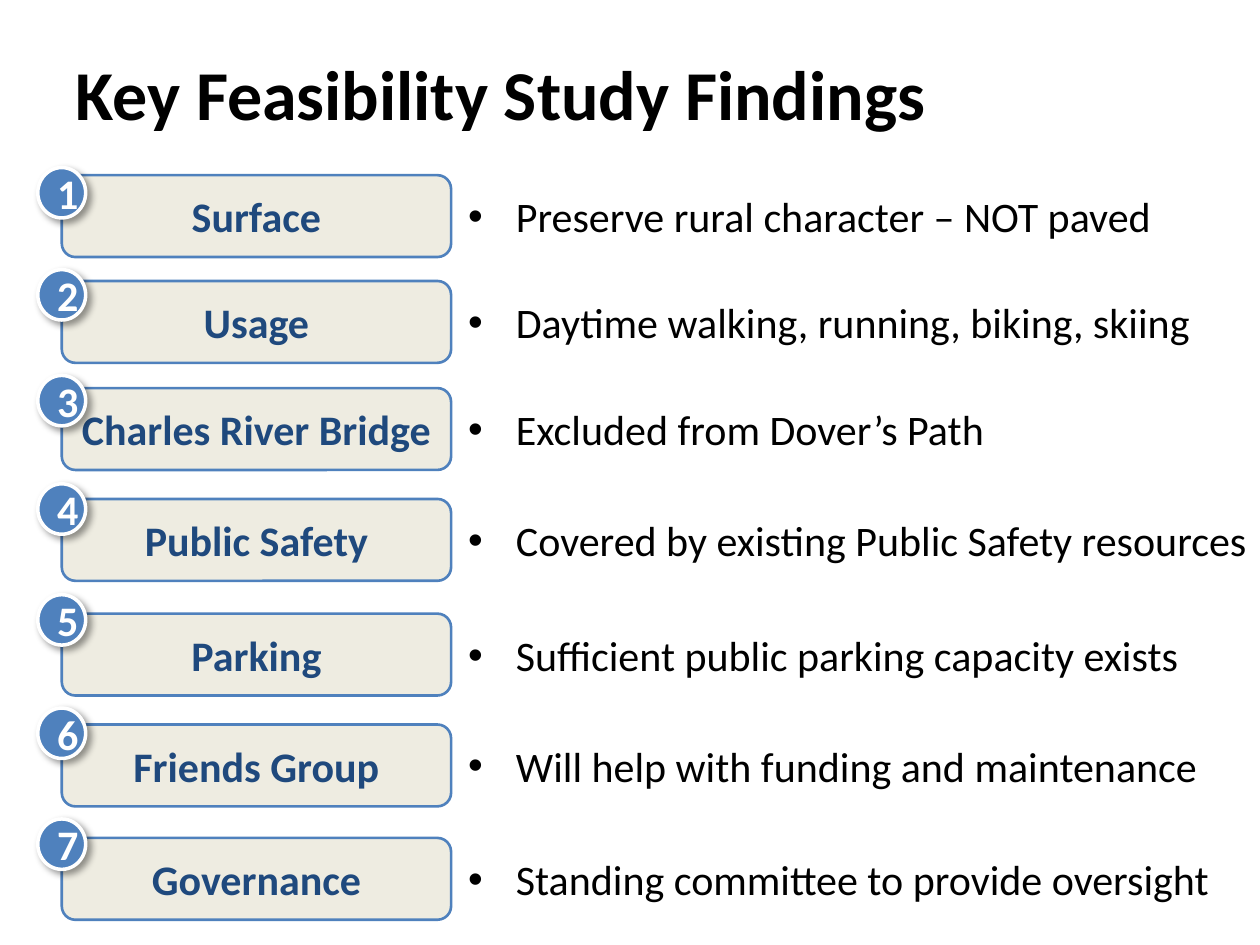
from lxml import etree
from pptx import Presentation
from pptx import util as u
from pptx.dml.color import RGBColor
from pptx.enum import shapes, text
from pptx.oxml.ns import qn

TITLE = "Key Feasibility Study Findings"
# label, finding, label top, badge top, finding width
FINDINGS = [
    ("Surface", "Preserve rural character – NOT paved", 1.39, 1.33, 5.75),
    ("Usage", "Daytime walking, running, biking, skiing", 2.23, 2.14, 6.08),
    ("Charles River Bridge", "Excluded from Dover’s Path", 3.08, 2.98, 6.08),
    ("Public Safety", "Covered by existing Public Safety resources", 3.96, 3.84, 6.58),
    ("Parking", "Sufficient public parking capacity exists", 4.87, 4.72, 6.25),
    ("Friends Group", "Will help with funding and maintenance", 5.75, 5.62, 6.25),
    ("Governance", "Standing committee to provide oversight", 6.65, 6.5, 6.25),
]
COLORS = {"text": "000000", "label": "1F497D", "box": "EEECE1",
          "accent": "4F81BD", "white": "FFFFFF"}
FONT = "Calibri"
LABEL_X, LABEL_W, LABEL_H = 0.49, 3.09, 0.65
BADGE_X, BADGE_W, BADGE_H = 0.3, 0.38, 0.4
FINDING_X, FINDING_H = LABEL_X + LABEL_W, 0.75
KIND = shapes.MSO_SHAPE


def rgb(name):
    return RGBColor.from_string(COLORS[name])


def write(sp, words, color, align, size=24, bold=False):
    tf = sp.text_frame
    tf.word_wrap = True
    tf.vertical_anchor = text.MSO_ANCHOR.MIDDLE
    p = tf.paragraphs[0]
    p.alignment = align
    r = p.add_run()
    r.text = words
    r.font.name, r.font.size, r.font.bold = FONT, u.Pt(size), bold
    r.font.color.rgb = rgb(color)
    return p


def add_box(parent, kind, box, fill=None, line=None, width=1.5):
    sp = parent.add_shape(kind, *[u.Inches(v) for v in box])
    sp.shadow.inherit = False
    if fill:
        sp.fill.solid()
        sp.fill.fore_color.rgb = rgb(fill)
        sp.line.color.rgb = rgb(line)
        sp.line.width = u.Pt(width)
    else:
        sp.fill.background()
        sp.line.fill.background()
    return sp


def add_shadow(sp):
    effects = sp._element.spPr.find(qn("a:effectLst"))
    shadow = etree.SubElement(effects, qn("a:outerShdw"), blurRad=str(u.Pt(4)),
                              dist=str(u.Pt(3)), dir=str(45 * 60000),
                              algn="tl", rotWithShape="0")
    color = etree.SubElement(shadow, qn("a:srgbClr"), val=COLORS["text"])
    etree.SubElement(color, qn("a:alpha"), val="40000")


def add_bullet(p):
    p.space_before = u.Pt(16)
    pPr = p._p.get_or_add_pPr()
    pPr.set("marL", str(u.Inches(0.38)))
    pPr.set("indent", str(-u.Inches(0.38)))
    etree.SubElement(pPr, qn("a:buFont"), typeface="Arial")
    etree.SubElement(pPr, qn("a:buChar"), char="•")


prs = Presentation()
prs.slide_width, prs.slide_height = u.Inches(10), u.Inches(7.5)
s = prs.slides.add_slide(prs.slide_layouts[5])

# Title
title = s.shapes.title
title.left, title.top = u.Inches(0.5), u.Inches(0.3)
title.width, title.height = u.Inches(9), u.Inches(0.87)
write(title, TITLE, "text", text.PP_ALIGN.LEFT, 40, True)

# Numbered labels
for number, (label, _, label_y, badge_y, _) in enumerate(FINDINGS, 1):
    group = s.shapes.add_group_shape().shapes
    sp = add_box(group, KIND.ROUNDED_RECTANGLE,
                 (LABEL_X, label_y, LABEL_W, LABEL_H), "box", "accent")
    write(sp, label, "label", text.PP_ALIGN.CENTER, bold=True)
    badge = add_box(group, KIND.OVAL, (BADGE_X, badge_y, BADGE_W, BADGE_H),
                    "accent", "white", 2)
    add_shadow(badge)
    write(badge, str(number), "white", text.PP_ALIGN.CENTER, bold=True)

# Findings, centred on their labels
for _, finding, label_y, _, width in FINDINGS:
    y = label_y + (LABEL_H - FINDING_H) / 2
    sp = add_box(s.shapes, KIND.ROUNDED_RECTANGLE, (FINDING_X, y, width, FINDING_H))
    add_bullet(write(sp, finding, "text", text.PP_ALIGN.LEFT))

prs.save("out.pptx")
